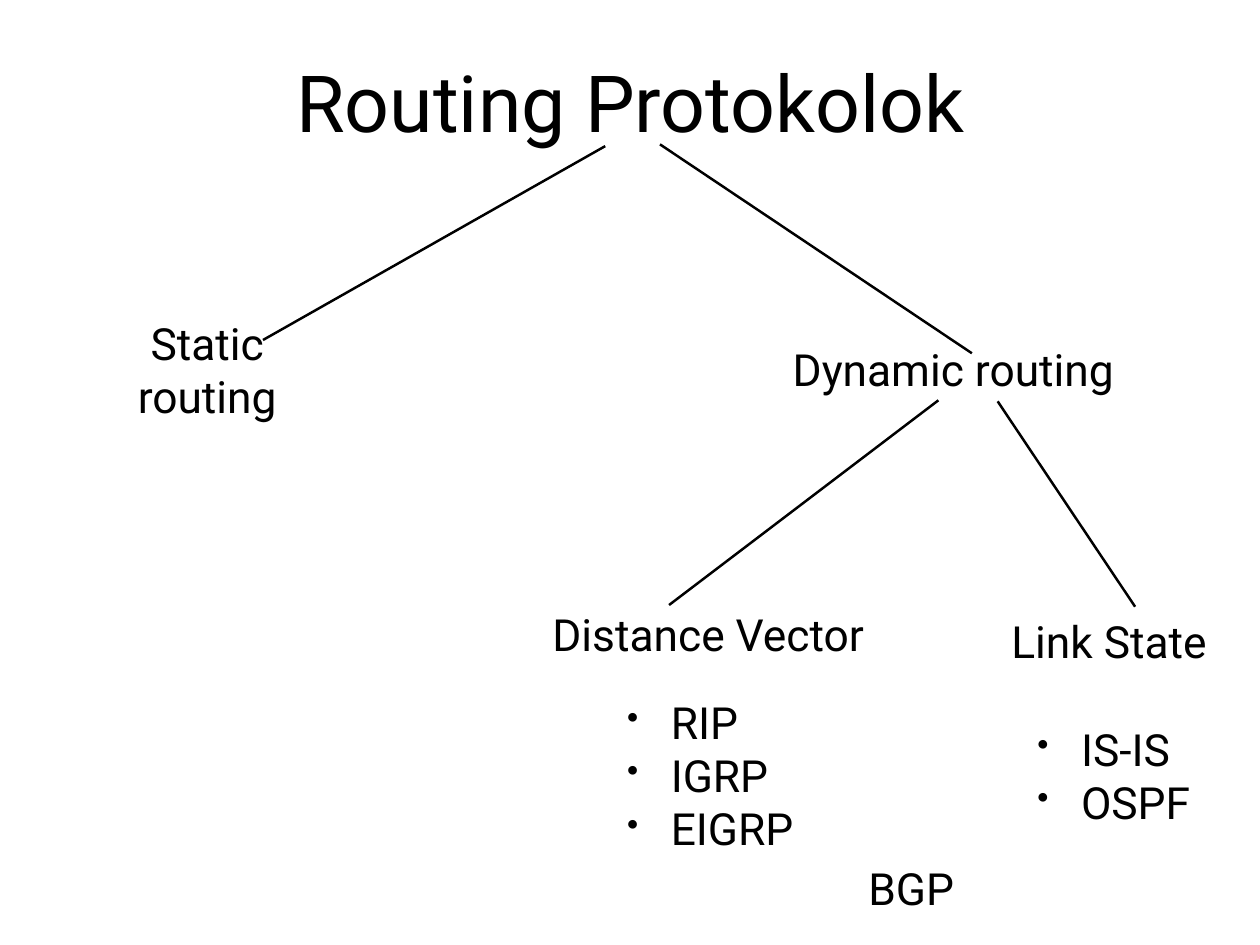
from lxml.etree import SubElement
from pptx import Presentation
from pptx.dml.color import RGBColor
from pptx.enum.shapes import MSO_CONNECTOR
from pptx.enum.text import MSO_ANCHOR, MSO_AUTO_SIZE, PP_ALIGN
from pptx.oxml.ns import qn
from pptx.util import Cm, Pt

BLACK = RGBColor(0x00, 0x00, 0x00)
WHITE = RGBColor(0xFF, 0xFF, 0xFF)


class TreeSlide:
    """Holds the text style and the slide that is being filled."""

    font_name = "Roboto"
    title_size = Pt(64)
    label_size = Pt(36)
    line_width = Pt(2)
    inset = Cm(0.15)
    bullet_indent = Cm(1.25)

    def __init__(self, deck):
        self.slide = deck.slides.add_slide(deck.slide_layouts[5])
        self.slide.background.fill.solid()
        self.slide.background.fill.fore_color.rgb = WHITE

    def format_text(self, box, size, align, wrap):
        frame = box.text_frame
        frame.word_wrap = wrap
        frame.auto_size = MSO_AUTO_SIZE.NONE
        frame.vertical_anchor = MSO_ANCHOR.MIDDLE
        frame.margin_left = frame.margin_right = self.inset
        frame.margin_top = frame.margin_bottom = self.inset
        for para in frame.paragraphs:
            para.alignment = align
            for span in para.runs:
                span.font.name = self.font_name
                span.font.size = size
                span.font.color.rgb = BLACK

    def title(self, text, left, top, width, height):
        box = self.slide.shapes.title
        box.left, box.top = Cm(left), Cm(top)
        box.width, box.height = Cm(width), Cm(height)
        box.text_frame.text = text
        self.format_text(box, self.title_size, PP_ALIGN.CENTER, True)

    def label(self, text, left, top, width, height=1.8, wrap=False,
              align=PP_ALIGN.CENTER):
        box = self.slide.shapes.add_textbox(
            Cm(left), Cm(top), Cm(width), Cm(height))
        box.text_frame.text = text
        self.format_text(box, self.label_size, align, wrap)
        return box

    def bullets(self, items, left, top, width, height):
        box = self.label("\n".join(items), left, top, width, height,
                         wrap=True, align=PP_ALIGN.LEFT)
        for para in box.text_frame.paragraphs:
            properties = para._p.get_or_add_pPr()
            properties.set("marL", str(self.bullet_indent))
            properties.set("indent", str(-self.bullet_indent))
            SubElement(properties, qn("a:buSzPct"), val="75000")
            SubElement(properties, qn("a:buChar"), char="•")

    def branch(self, start_x, start_y, end_x, end_y):
        line = self.slide.shapes.add_connector(
            MSO_CONNECTOR.STRAIGHT,
            Cm(start_x), Cm(start_y), Cm(end_x), Cm(end_y))
        line.line.color.rgb = BLACK
        line.line.width = self.line_width
        SubElement(line._element.spPr, qn("a:effectLst"))


def main():
    deck = Presentation()
    deck.slide_width, deck.slide_height = Cm(36.12), Cm(27.1)
    tree = TreeSlide(deck)

    # Root of the tree
    tree.title("Routing Protokolok", 7.59, 0.89, 20.96, 4.01)

    # Routing types
    tree.label("Static routing", 3.4, 8.94, 5.08, 3.3, wrap=True)
    tree.label("Dynamic routing", 22.53, 9.68, 9.6)

    # Dynamic routing families
    tree.label("Distance Vector", 15.67, 17.27, 9.27)
    tree.label("Link State", 28.85, 17.48, 5.89)

    # Protocols
    tree.bullets(["RIP", "IGRP", "EIGRP"], 17.83, 19.81, 5.28, 4.83)
    tree.bullets(["IS-IS", "OSPF"], 29.59, 19.81, 5.16, 4.83)
    tree.label("BGP", 24.66, 24.56, 2.92)

    # Branches, from child to parent
    for ends in [
        (7.54, 9.75, 17.35, 4.19),
        (27.86, 10.13, 18.92, 4.14),
        (19.18, 17.35, 26.9, 11.48),
        (32.54, 17.4, 28.6, 11.51),
    ]:
        tree.branch(*ends)

    deck.save("out.pptx")


if __name__ == "__main__":
    main()
